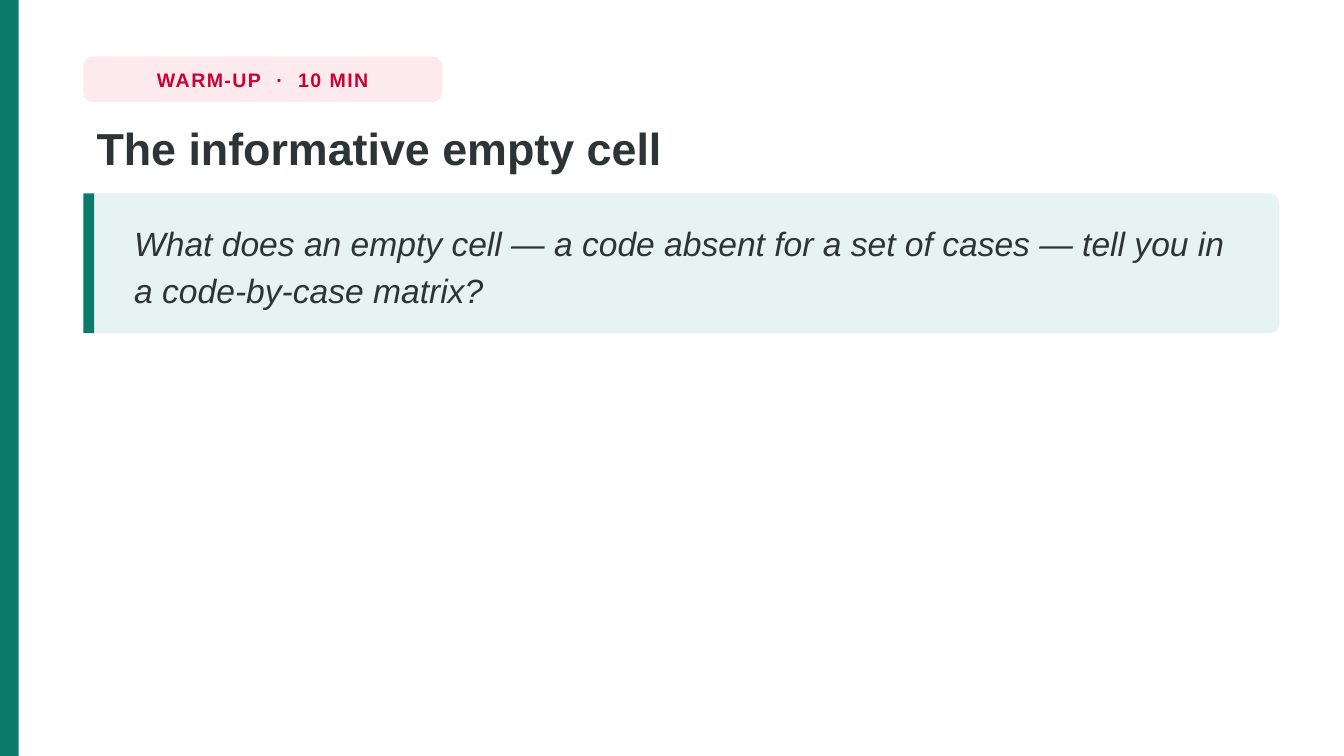
from pptx import Presentation
from pptx.dml.color import RGBColor
from pptx.enum.shapes import MSO_SHAPE
from pptx.enum.text import MSO_ANCHOR, PP_ALIGN
from pptx.util import Pt

GREEN, MINT = "0B7B6B", "E6F3F0"
RED, PINK = "CC0033", "FDEAEF"
INK, WHITE = "2D3436", "FFFFFF"

SLIDE_WIDTH, SLIDE_HEIGHT = 720, 405
LEFT, CONTENT_WIDTH = 44.64, 640.8
BADGE = (LEFT, 30.24, 192.24, 24.48)
QUOTE_TOP, QUOTE_HEIGHT = 103.68, 74.88
CORNER_RADIUS = 4.8 * 0.9 + 0.7


def color(hex_string):
    return RGBColor.from_string(hex_string)


class SlideBuilder:
    def __init__(self, slide, font_name="Arial"):
        self.slide = slide
        self.font_name = font_name

    def background(self, fill):
        self.slide.background.fill.solid()
        self.slide.background.fill.fore_color.rgb = color(fill)

    def block(self, box, fill, radius=0):
        """Add a filled rectangle, rounded when a radius is given."""
        kind = MSO_SHAPE.ROUNDED_RECTANGLE if radius else MSO_SHAPE.RECTANGLE
        shape = self.slide.shapes.add_shape(kind, *map(Pt, box))
        if radius:
            shape.adjustments[0] = radius / min(box[2:])
        shape.shadow.inherit = False
        shape.fill.solid()
        shape.fill.fore_color.rgb = color(fill)
        shape.line.fill.background()

    def text(self, box, pieces, ink, font, frame=None, layout=None):
        """Add one paragraph; pieces are (text, letter spacing) pairs."""
        text_frame = self.slide.shapes.add_textbox(*map(Pt, box)).text_frame
        paragraph = text_frame.paragraphs[0]
        for name, value in {"word_wrap": True, **(frame or {})}.items():
            setattr(text_frame, name, value)
        for name, value in (layout or {}).items():
            setattr(paragraph, name, value)
        for words, spacing in pieces:
            run = paragraph.add_run()
            run.text = words
            for name, value in {"name": self.font_name, **font}.items():
                setattr(run.font, name, value)
            run.font.color.rgb = color(ink)
            if spacing:
                run._r.get_or_add_rPr().set("spc", str(round(spacing * 100)))


def main():
    presentation = Presentation()
    presentation.slide_width = Pt(SLIDE_WIDTH)
    presentation.slide_height = Pt(SLIDE_HEIGHT)
    builder = SlideBuilder(presentation.slides.add_slide(presentation.slide_layouts[6]))

    builder.background(WHITE)
    builder.block((0, 0, 10.08, SLIDE_HEIGHT), GREEN)

    builder.block(BADGE, PINK, CORNER_RADIUS)
    letter_gap, word_gap = 0.8, 4.5
    builder.text(
        BADGE,
        [("WARM-UP", letter_gap), (" ", word_gap), ("·", letter_gap),
         (" ", word_gap), ("10 MIN", letter_gap)],
        RED,
        {"size": Pt(10.5), "bold": True},
        {"word_wrap": False, "vertical_anchor": MSO_ANCHOR.MIDDLE},
        {"alignment": PP_ALIGN.CENTER},
    )

    builder.text(
        (LEFT, 60.48, CONTENT_WIDTH, 40.32),
        [("The informative empty cell", 0)],
        INK,
        {"size": Pt(24), "bold": True},
        layout={"line_spacing": 1.02},
    )

    builder.block((LEFT, QUOTE_TOP, CONTENT_WIDTH, QUOTE_HEIGHT), MINT, CORNER_RADIUS)
    builder.block((LEFT, QUOTE_TOP, 5.76, QUOTE_HEIGHT), GREEN)
    builder.text(
        (64.8, QUOTE_TOP + 3.6, 601.2, QUOTE_HEIGHT - 7.2),
        [("What does an empty cell — a code absent for a set of cases — "
          "tell you in a code-by-case matrix?", 0)],
        INK,
        {"size": Pt(18), "italic": True},
        {"vertical_anchor": MSO_ANCHOR.MIDDLE},
        {"line_spacing": 1.16},
    )

    presentation.save("out.pptx")


if __name__ == "__main__":
    main()
